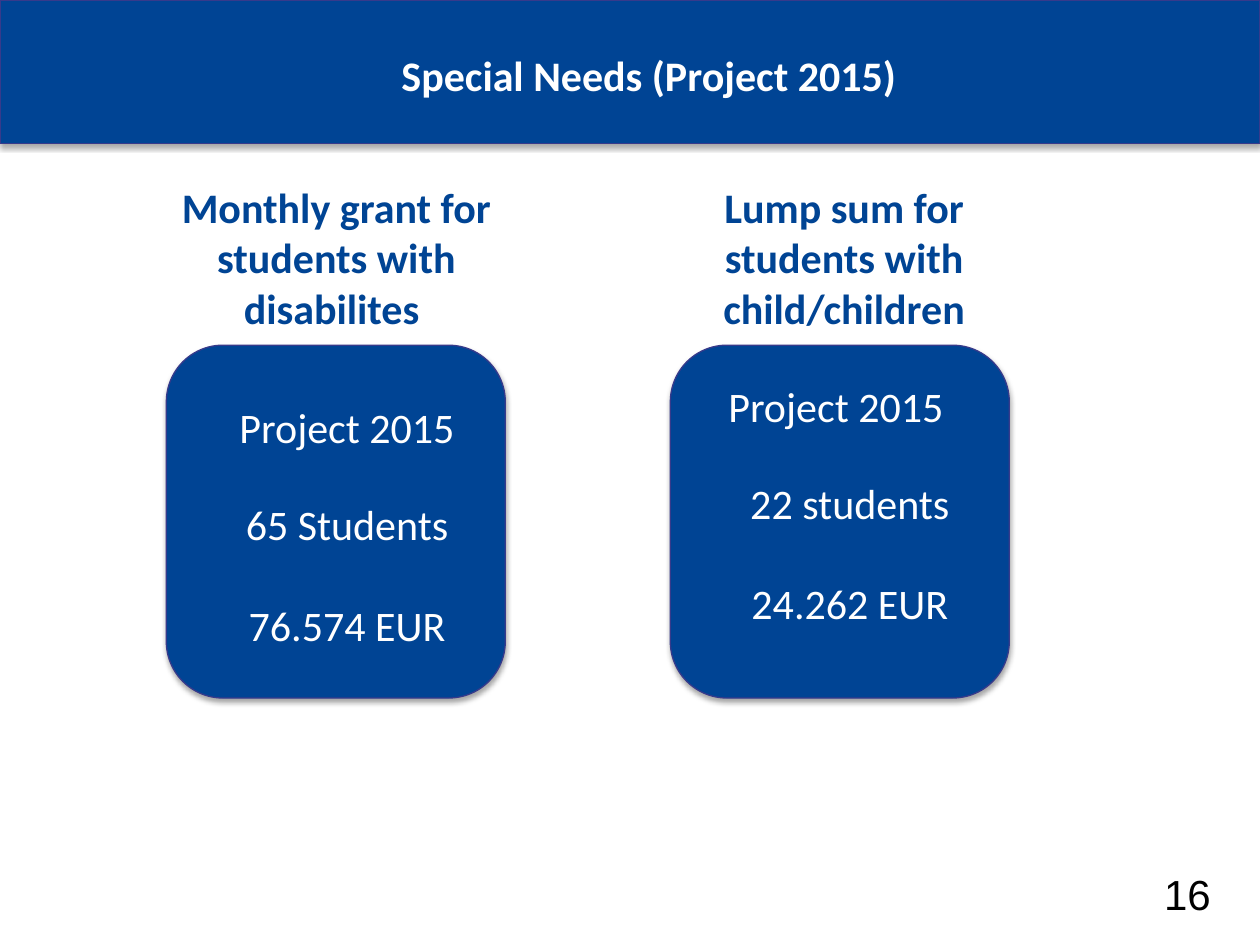
from lxml import etree
from pptx import Presentation
from pptx import util as u
from pptx.dml.color import RGBColor
from pptx.enum import shapes, text
from pptx.oxml import ns

BLUE = RGBColor(0x00, 0x44, 0x94)
VIOLET = RGBColor(0x37, 0x3A, 0x8B)
WHITE = RGBColor(0xFF, 0xFF, 0xFF)
BLACK = RGBColor(0x00, 0x00, 0x00)

BASE_FONT = {"name": "Calibri", "size": u.Pt(24), "bold": False}
BLANK_LINE = u.Pt(28.5)
CARD_TOP = 2.74

GRANTS = [
    {
        "card_left": 1.32,
        "heading": ("Monthly grant for students with disabilites ", (1.04, 1.39, 3.26, 1.31)),
        "project": ("Project 2015", (1.79, 3.14, 1.93, 0.5)),
        "figures": (["65 Students", "76.574 EUR"], (1.79, 3.91, 1.93, 1.31)),
    },
    {
        "card_left": 5.32,
        "heading": ("Lump sum for students with child/children", (5.2, 1.39, 3, 1.31)),
        "project": ("Project 2015", (5.65, 2.97, 1.97, 0.5)),
        "figures": (["22 students", "24.262 EUR"], (5.65, 3.74, 2.19, 1.31)),
    },
]


def inches(box):
    return [u.Inches(length) for length in box]


def write_lines(frame, lines, color, align=text.PP_ALIGN.CENTER, **font_values):
    frame.word_wrap = True
    for index, line in enumerate(lines):
        paragraph = frame.paragraphs[0] if index == 0 else frame.add_paragraph()
        paragraph.alignment = align
        if index:
            paragraph.space_before = BLANK_LINE
        run = paragraph.add_run()
        run.text = line
        for name, value in {**BASE_FONT, **font_values}.items():
            setattr(run.font, name, value)
        run.font.color.rgb = color


def add_label(slide, lines, box, color, **format_values):
    label = slide.shapes.add_textbox(*inches(box))
    write_lines(label.text_frame, lines, color, **format_values)
    return label


def add_shadow(shape):
    shape.shadow.inherit = False
    effects = shape._element.spPr.find(ns.qn("a:effectLst"))
    outer = etree.SubElement(
        effects, ns.qn("a:outerShdw"),
        blurRad=str(u.Pt(3.1)), dist=str(u.Pt(1.8)), dir="5400000", rotWithShape="0",
    )
    shade = etree.SubElement(outer, ns.qn("a:srgbClr"), val="000000")
    etree.SubElement(shade, ns.qn("a:alpha"), val="35000")


def add_panel(slide, preset, box):
    panel = slide.shapes.add_shape(preset, *inches(box))
    panel.fill.solid()
    panel.fill.fore_color.rgb = BLUE
    panel.line.color.rgb = VIOLET
    panel.line.width = u.Pt(0.75)
    add_shadow(panel)
    return panel


def add_header(slide, wording):
    band = add_panel(slide, shapes.MSO_SHAPE.RECTANGLE, (0, 0, 10, 1.14))
    slide.shapes._spTree.insert(2, band._element)
    title = slide.shapes.title
    title.left, title.top, title.width, title.height = inches((0.29, 0.16, 9.72, 0.87))
    frame = title.text_frame
    frame.auto_size = text.MSO_AUTO_SIZE.NONE
    frame.vertical_anchor = text.MSO_ANCHOR.MIDDLE
    write_lines(frame, [wording], WHITE, bold=True)


def add_grant(slide, grant):
    add_panel(slide, shapes.MSO_SHAPE.ROUNDED_RECTANGLE, (grant["card_left"], CARD_TOP, 2.69, 2.8))
    heading, heading_box = grant["heading"]
    add_label(slide, [heading], heading_box, BLUE, bold=True)
    project, project_box = grant["project"]
    add_label(slide, [project], project_box, WHITE)
    figures, figures_box = grant["figures"]
    add_label(slide, figures, figures_box, WHITE)


def add_page_number(slide, number):
    page = add_label(slide, [number], (8.43, 6.89, 1.18, 0.61), BLACK,
                     align=text.PP_ALIGN.RIGHT, name="Arial")
    for side in ("left", "top", "right", "bottom"):
        setattr(page.text_frame, f"margin_{side}", 0)


def main():
    deck = Presentation()
    deck.slide_width, deck.slide_height = inches((10, 7.5))
    slide = deck.slides.add_slide(deck.slide_layouts[5])
    add_header(slide, "Special Needs (Project 2015)")
    for grant in GRANTS:
        add_grant(slide, grant)
    add_page_number(slide, "16")
    deck.save("out.pptx")


if __name__ == "__main__":
    main()
